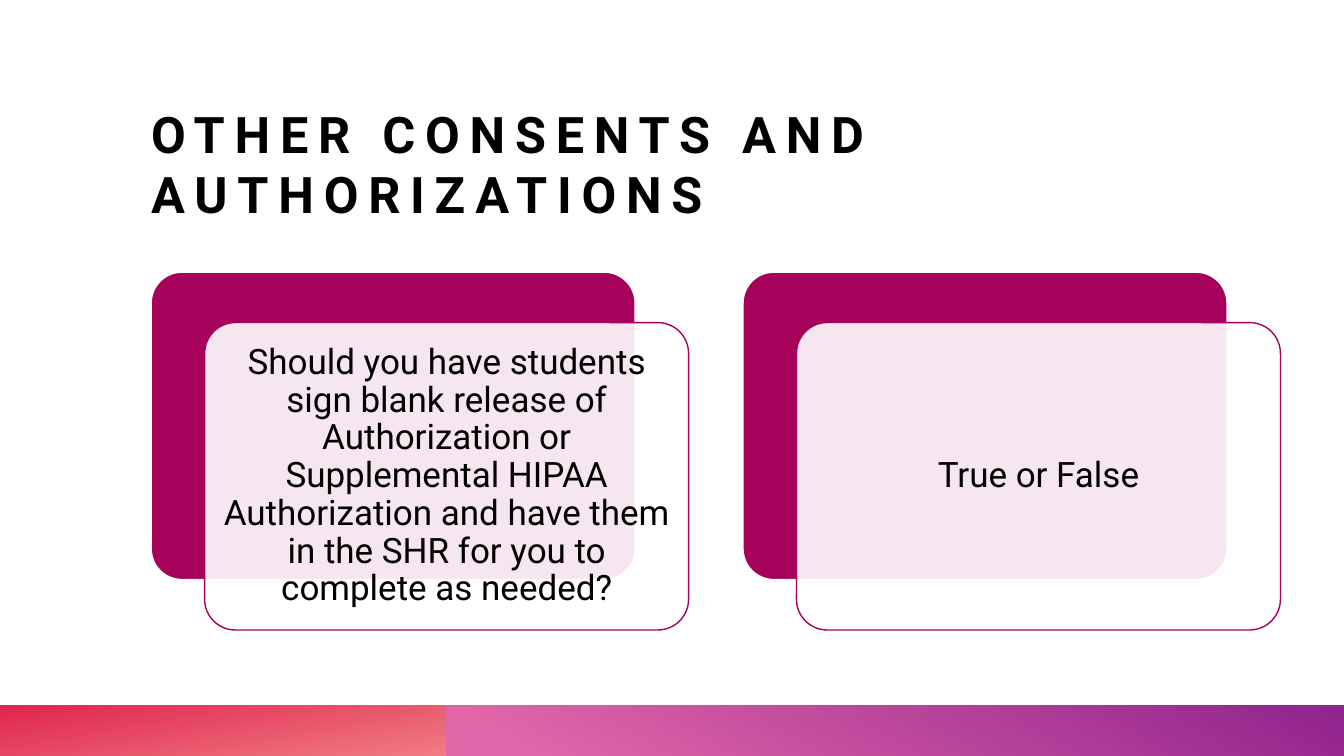
from dataclasses import dataclass

from lxml import etree
from pptx import Presentation
from pptx import util as u
from pptx.dml import color
from pptx.enum import shapes, text
from pptx.oxml import ns


@dataclass(frozen=True)
class Theme:
    font: str = "Roboto"
    ink: str = "000000"
    paper: str = "FFFFFF"
    accent: str = "A6025C"
    warm: tuple = ((0.14, "FFCCB8"), (1, "E0264E"))
    violet: tuple = ((0.09, "E066A8"), (0.99, "92248E"))
    title_size: int = 36
    card_size: int = 25


THEME = Theme()
CARDS = (
    "Should you have students sign blank release of Authorization or "
    "Supplemental HIPAA Authorization and have them in the SHR for you "
    "to complete as needed?",
    "True or False",
)
CARD_LEFT, CARD_TOP, CARD_PITCH = 1.5, 2.7, 5.87
CARD_SIZE = (4.8, 3.05)
CARD_OFFSET = (0.53, 0.5)


def rgb(value):
    return color.RGBColor.from_string(value)


def apply_format(target, values):
    for name, value in values.items():
        setattr(target, name, value)


def write_text(shape, words, size, frame_format, paragraph_format, bold=False):
    frame = shape.text_frame
    apply_format(frame, {"word_wrap": True, **frame_format})
    paragraph = frame.paragraphs[0]
    apply_format(paragraph, paragraph_format)
    run = paragraph.add_run()
    run.text = words
    apply_format(run.font, {"name": THEME.font, "size": u.Pt(size), "bold": bold})
    run.font.color.rgb = rgb(THEME.ink)
    return run


def margins(value):
    sides = ("left", "top", "right", "bottom")
    return {f"margin_{side}": u.Inches(value) for side in sides}


def add_title(slide, words):
    box = slide.shapes.add_textbox(*map(u.Inches, (1.5, 0.87, 11.2, 1.35)))
    frame_format = {"vertical_anchor": text.MSO_ANCHOR.BOTTOM, **margins(0)}
    paragraph_format = {"alignment": text.PP_ALIGN.LEFT}
    run = write_text(box, words, THEME.title_size, frame_format, paragraph_format, True)
    run.font._element.set("spc", "700")


def add_band(slide, left, width, stops, angle):
    band = slide.shapes.add_shape(
        shapes.MSO_SHAPE.RECTANGLE, *map(u.Inches, (left, 7, width, 0.5))
    )
    band.shadow.inherit = False
    band.line.fill.background()
    band.fill.gradient()
    band.fill.gradient_angle = angle
    for stop, (position, value) in zip(band.fill.gradient_stops, stops):
        stop.position = position
        stop.color.rgb = rgb(value)


def add_panel(slide, left, top, fill, line):
    panel = slide.shapes.add_shape(
        shapes.MSO_SHAPE.ROUNDED_RECTANGLE, *map(u.Inches, (left, top, *CARD_SIZE))
    )
    panel.adjustments[0] = 0.1
    panel.shadow.inherit = False
    panel.fill.solid()
    panel.fill.fore_color.rgb = rgb(fill)
    panel.line.color.rgb = rgb(line)
    panel.line.width = u.Pt(1)
    return panel


def set_opacity(shape, percent):
    fill = shape._element.spPr.find(ns.qn("a:solidFill"))
    etree.SubElement(fill[0], ns.qn("a:alpha"), val=str(percent * 1000))


def add_card(slide, left, top, words):
    add_panel(slide, left, top, THEME.accent, THEME.paper)
    shift_x, shift_y = CARD_OFFSET
    front = add_panel(slide, left + shift_x, top + shift_y, THEME.paper, THEME.accent)
    set_opacity(front, 90)
    frame_format = {"vertical_anchor": text.MSO_ANCHOR.MIDDLE, **margins(0.1)}
    paragraph_format = {"alignment": text.PP_ALIGN.CENTER, "line_spacing": 0.9}
    write_text(front, words, THEME.card_size, frame_format, paragraph_format)


def main():
    presentation = Presentation()
    presentation.slide_width = u.Inches(13.33)
    presentation.slide_height = u.Inches(7.5)
    slide = presentation.slides.add_slide(presentation.slide_layouts[6])
    add_band(slide, 0, 13.33, THEME.warm, 100)
    add_band(slide, 4.42, 8.91, THEME.violet, 60)
    add_title(slide, "OTHER CONSENTS AND AUTHORIZATIONS")
    for index, words in enumerate(CARDS):
        add_card(slide, CARD_LEFT + index * CARD_PITCH, CARD_TOP, words)
    presentation.save("out.pptx")


if __name__ == "__main__":
    main()
